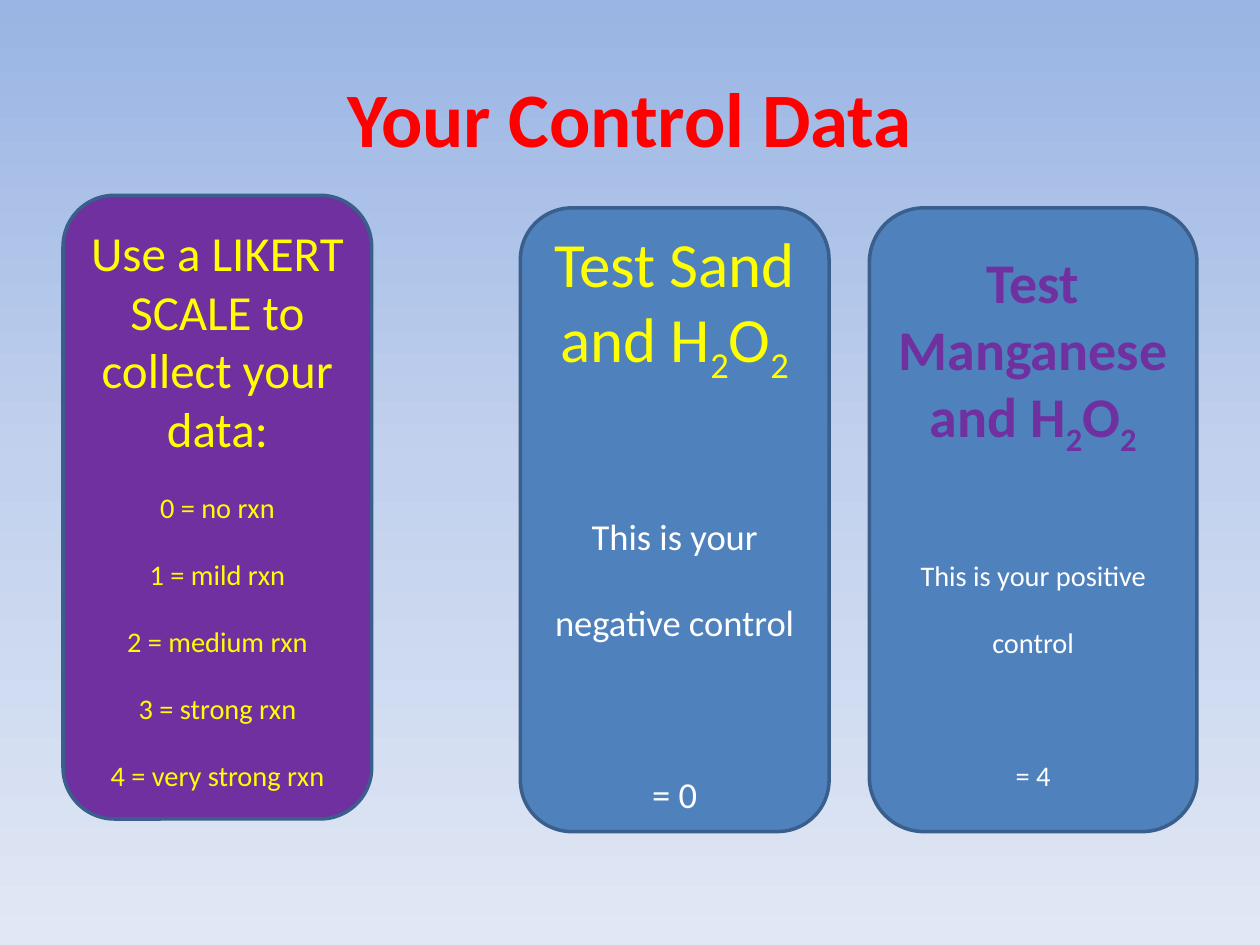
from copy import deepcopy

from pptx import Presentation
from pptx.dml.color import RGBColor
from pptx.enum.shapes import MSO_SHAPE
from pptx.enum.text import MSO_ANCHOR, PP_ALIGN
from pptx.oxml.ns import qn
from pptx.util import Inches, Pt

ROUNDED = MSO_SHAPE.ROUNDED_RECTANGLE
MIDDLE = MSO_ANCHOR.MIDDLE
CENTER = PP_ALIGN.CENTER

RED = RGBColor(0xFF, 0x00, 0x00)
YELLOW = RGBColor(0xFF, 0xFF, 0x00)
WHITE = RGBColor(0xFF, 0xFF, 0xFF)
PURPLE = RGBColor(0x70, 0x30, 0xA0)
BLUE = RGBColor(0x4F, 0x81, 0xBD)
OUTLINE = RGBColor(0x3A, 0x5F, 0x8C)
SKY = [
    (0, RGBColor(0x9A, 0xB5, 0xE4)),
    (0.5, RGBColor(0xC2, 0xD1, 0xED)),
    (1, RGBColor(0xE1, 0xE8, 0xF5)),
]

FONT = "Calibri"
PEROXIDE = [("H", False), ("2", True), ("O", False), ("2", True)]
SCALE = ["0 = no rxn", "1 = mild rxn", "2 = medium rxn", "3 = strong rxn", "4 = very strong rxn"]


def set_background(slide):
    fill = slide.background.fill
    fill.gradient()
    fill.gradient_angle = 270
    stop_list = slide.element.find(".//" + qn("a:gsLst"))
    stop_list.insert(1, deepcopy(stop_list[0]))
    for stop, (position, color) in zip(fill.gradient_stops, SKY):
        stop.position = position
        stop.color.rgb = color


def add_run(paragraph, text, size, color, bold=False, subscript=False):
    run = paragraph.add_run()
    run.text = text
    run.font.name = FONT
    run.font.size = Pt(size)
    run.font.bold = bold
    run.font.color.rgb = color
    if subscript:
        run.font._element.set("baseline", "-25000")


def add_title(slide, text):
    title = slide.shapes.title
    title.left, title.top = Inches(0.5), Inches(0.3)
    title.width, title.height = Inches(9), Inches(1.25)
    title.text_frame.vertical_anchor = MIDDLE
    paragraph = title.text_frame.paragraphs[0]
    paragraph.alignment = CENTER
    add_run(paragraph, text, 44, RED, bold=True)


def add_card(slide, left, top, width, fill):
    card = slide.shapes.add_shape(ROUNDED, Inches(left), Inches(top), Inches(width), Inches(4.95))
    card.shadow.inherit = False
    card.fill.solid()
    card.fill.fore_color.rgb = fill
    card.line.color.rgb = OUTLINE
    card.line.width = Pt(2)
    card.text_frame.word_wrap = True
    card.text_frame.vertical_anchor = MIDDLE
    return card.text_frame


def add_heading(frame, parts, size, color, bold=False):
    paragraph = frame.paragraphs[0]
    paragraph.alignment = CENTER
    for text, subscript in parts:
        add_run(paragraph, text, size, color, bold, subscript)


def add_notes(frame, lines, size, color, gap=0):
    for line in lines:
        paragraph = frame.add_paragraph()
        paragraph.alignment = CENTER
        paragraph.space_before = Pt(gap)
        add_run(paragraph, line, size, color, subscript=True)


def main():
    presentation = Presentation()
    presentation.slide_width = Inches(10)
    presentation.slide_height = Inches(7.5)
    slide = presentation.slides.add_slide(presentation.slide_layouts[5])
    set_background(slide)
    add_title(slide, "Your Control Data")

    negative = add_card(slide, 4.13, 1.65, 2.45, BLUE)
    add_heading(negative, [("Test Sand and ", False)] + PEROXIDE, 36, YELLOW)
    add_notes(negative, ["This is your negative control", "= 0"], 36, WHITE, gap=49)

    positive = add_card(slide, 6.9, 1.65, 2.6, BLUE)
    add_heading(positive, [("Test Manganese and ", False)] + PEROXIDE, 32, PURPLE, bold=True)
    add_notes(positive, ["This is your positive control", "= 4"], 28, WHITE, gap=38)

    likert = add_card(slide, 0.5, 1.55, 2.45, PURPLE)
    add_heading(likert, [("Use a LIKERT SCALE to collect your data:", False)], 28, YELLOW)
    add_notes(likert, SCALE, 28, YELLOW)

    presentation.save("out.pptx")


if __name__ == "__main__":
    main()
